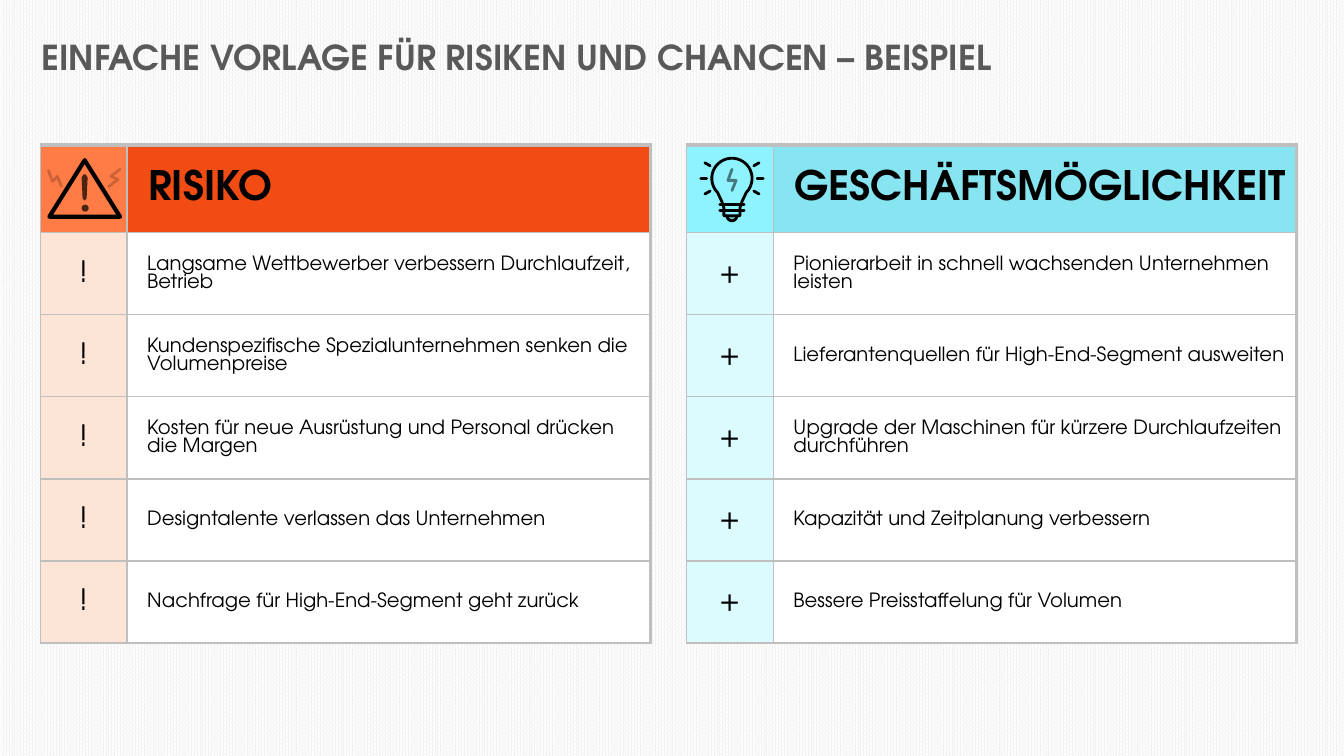
from math import cos, radians, sin

from pptx import Presentation
from pptx.dml.color import RGBColor
from pptx.enum.dml import MSO_PATTERN
from pptx.enum.shapes import MSO_CONNECTOR, MSO_SHAPE
from pptx.enum.text import MSO_ANCHOR, MSO_AUTO_SIZE, PP_ALIGN
from pptx.oxml.ns import qn
from pptx.util import Inches, Pt
from lxml.etree import SubElement

TITLE = "EINFACHE VORLAGE FÜR RISIKEN UND CHANCEN – BEISPIEL"
PANELS = [
    dict(left=0.4, heading="RISIKO", sign="!",
         icon_fill="FF7C46", heading_fill="F04C13", sign_fill="FCE4D6",
         entries=["Langsame Wettbewerber verbessern Durchlaufzeit, Betrieb",
                  "Kundenspezifische Spezialunternehmen senken die Volumenpreise",
                  "Kosten für neue Ausrüstung und Personal drücken die Margen",
                  "Designtalente verlassen das Unternehmen",
                  "Nachfrage für High-End-Segment geht zurück"]),
    dict(left=6.81, heading="GESCHÄFTSMÖGLICHKEIT", sign="+",
         icon_fill="8EF3FF", heading_fill="86E5F1", sign_fill="DCFBFF",
         entries=["Pionierarbeit in schnell wachsenden Unternehmen leisten",
                  "Lieferantenquellen für High-End-Segment ausweiten",
                  "Upgrade der Maschinen für kürzere Durchlaufzeiten durchführen",
                  "Kapazität und Zeitplanung verbessern",
                  "Bessere Preisstaffelung für Volumen"]),
]
FONT = "TeX Gyre Adventor"
BLACK, GRAY, BORDER = "000000", "595959", "BFBFBF"
TABLE_TOP, TABLE_HEIGHT, HEADER_HEIGHT = 1.44, 4.94, 0.87
COLUMNS = (0.86, 5.19)
WARNING_CENTER, BULB_CENTER = (0.84, 1.87), (7.26, 1.77)
WARNING_BOLTS = [
    [(-0.23, -0.02), (-0.27, -0.12), (-0.32, -0.07), (-0.36, -0.18)],
    [(0.24, -0.02), (0.33, -0.09), (0.26, -0.12), (0.35, -0.19)],
]
BULB_BOLT = [(0, 0.12), (0.04, 0.02), (-0.04, 0.02), (0, -0.09)]
EXCLAMATION = [(-0.03, -0.11), (-0.01, -0.14), (0.01, -0.14), (0.03, -0.11),
               (0.02, 0.1), (0, 0.12), (-0.02, 0.1)]
SOCKET = [(0.08, 0.37), (0.08, 0.29), (0.1, 0.23)]


def rgb(value):
    return RGBColor.from_string(value)


def paint(fill, color, alpha=100):
    fill.solid()
    fill.fore_color.rgb = rgb(color)
    if alpha < 100:
        for tint in fill._xPr.iter(qn("a:srgbClr")):
            SubElement(tint, qn("a:alpha"), val=str(alpha * 1000))


def stroke(line, width, alpha=100):
    line.width = Pt(width)
    paint(line.fill, BLACK, alpha)
    line._ln.set("cap", "rnd")
    SubElement(line._ln, qn("a:round"))


def style(shape, fill_alpha=0, width=0, line_alpha=100):
    shape.shadow.inherit = False
    if fill_alpha:
        paint(shape.fill, BLACK, fill_alpha)
    else:
        shape.fill.background()
    if width:
        stroke(shape.line, width, line_alpha)
    else:
        shape.line.fill.background()


def outline(shapes, center, points, close=False, **look):
    placed = [(Inches(center[0] + x), Inches(center[1] + y)) for x, y in points]
    builder = shapes.build_freeform(*placed[0])
    builder.add_line_segments(placed[1:], close=close)
    style(builder.convert_to_shape(), **look)


def preset(shapes, kind, center, box, **look):
    x, y, width, height = box
    place = (center[0] + x, center[1] + y, width, height)
    style(shapes.add_shape(kind, *map(Inches, place)), **look)


def segment(shapes, center, start, end):
    ends = [Inches(c + d) for point in (start, end) for c, d in zip(center, point)]
    line = shapes.add_connector(MSO_CONNECTOR.STRAIGHT, *ends)
    stroke(line.line, 2)
    SubElement(line._element.spPr, qn("a:effectLst"))


def polar(radius, angle):
    return radius * cos(radians(angle)), radius * sin(radians(angle))


def write(frame, text, align=PP_ALIGN.LEFT, **font):
    paragraph = frame.paragraphs[0]
    paragraph.alignment = align
    run = paragraph.add_run()
    run.text = text
    color = font.pop("color", BLACK)
    for key, value in {"name": FONT, "bold": False, **font}.items():
        setattr(run.font, key, value)
    run.font.color.rgb = rgb(color)


def format_cell(cell, fill, indent, top, right):
    margins = dict(margin_left=indent, margin_top=0.01, margin_right=0.01, margin_bottom=0)
    for key, value in margins.items():
        setattr(cell, key, Inches(value))
    cell.vertical_anchor = MSO_ANCHOR.MIDDLE
    properties = cell._tc.get_or_add_tcPr()
    for side, width in dict(L=1, R=right, T=top, B=1).items():
        edge = SubElement(properties, qn(f"a:ln{side}"), w=str(Pt(width)))
        SubElement(SubElement(edge, qn("a:solidFill")), qn("a:srgbClr"), val=BORDER)
    paint(cell.fill, fill)


def add_panel(shapes, panel):
    rows = [("", panel["heading"])] + [(panel["sign"], entry) for entry in panel["entries"]]
    frame = shapes.add_table(len(rows), len(COLUMNS), Inches(panel["left"]),
                             Inches(TABLE_TOP), Inches(sum(COLUMNS)), Inches(TABLE_HEIGHT))
    table = frame.table
    table.first_row = table.horz_banding = False
    for column, width in zip(table.columns, COLUMNS):
        column.width = Inches(width)
    entry_height = (TABLE_HEIGHT - HEADER_HEIGHT) / len(panel["entries"])
    for r, (sign, text) in enumerate(rows):
        header = r == 0
        table.rows[r].height = Inches(HEADER_HEIGHT if header else entry_height)
        top = 3 if header else 1
        sign_cell, text_cell = table.cell(r, 0), table.cell(r, 1)
        format_cell(sign_cell, panel["icon_fill" if header else "sign_fill"], 0.01, top, 1)
        format_cell(text_cell, panel["heading_fill"] if header else "FFFFFF",
                    0.21 if header else 0.2, top, 2.25)
        if sign:
            write(sign_cell.text_frame, sign, PP_ALIGN.CENTER, size=Pt(21))
        write(text_cell.text_frame, text, size=Pt(29 if header else 14), bold=header)


def draw_warning(shapes):
    center = WARNING_CENTER
    for bolt in WARNING_BOLTS:
        outline(shapes, center, bolt, width=2, line_alpha=20)
    preset(shapes, MSO_SHAPE.ISOSCELES_TRIANGLE, center, (-0.35, -0.28, 0.7, 0.56), width=3)
    outline(shapes, center, EXCLAMATION, close=True, fill_alpha=70)
    preset(shapes, MSO_SHAPE.OVAL, center, (-0.03, 0.16, 0.07, 0.07), fill_alpha=70)


def draw_bulb(shapes):
    center = BULB_CENTER
    glass = [polar(0.2, angle) for angle in range(45, -226, -10)]
    mirrored = [(-x, y) for x, y in reversed(SOCKET)]
    outline(shapes, center, SOCKET + glass + mirrored, close=True, width=2)
    cup = [(x, y + 0.37) for x, y in (polar(0.05, a) for a in range(0, 181, 15))]
    outline(shapes, center, cup, fill_alpha=24, width=2)
    for y in (0.26, 0.32):
        segment(shapes, center, (-0.12, y), (0.12, y))
    for angle in (-30, 0, 30, 150, 180, 210):
        segment(shapes, center, polar(0.25, angle), polar(0.31, angle))
    outline(shapes, center, BULB_BOLT, width=2, line_alpha=50)


def main():
    deck = Presentation()
    deck.slide_width, deck.slide_height = Inches(13.33), Inches(7.5)
    slide = deck.slides.add_slide(deck.slide_layouts[5])
    backdrop = slide.background.fill
    backdrop.patterned()
    backdrop.pattern = MSO_PATTERN.PERCENT_80
    backdrop.fore_color.rgb = rgb("F2F2F2")
    backdrop.back_color.rgb = rgb("FFFFFF")

    title = slide.shapes.title
    for key, value in dict(left=0.31, top=0.3, width=9.98, height=0.52).items():
        setattr(title, key, Inches(value))
    frame_format = dict(word_wrap=False, auto_size=MSO_AUTO_SIZE.NONE,
                        vertical_anchor=MSO_ANCHOR.BOTTOM)
    for key, value in frame_format.items():
        setattr(title.text_frame, key, value)
    write(title.text_frame, TITLE, size=Pt(24.5), bold=True, color=GRAY)

    for panel in PANELS:
        add_panel(slide.shapes, panel)
    draw_warning(slide.shapes)
    draw_bulb(slide.shapes)
    deck.save("out.pptx")


if __name__ == "__main__":
    main()
